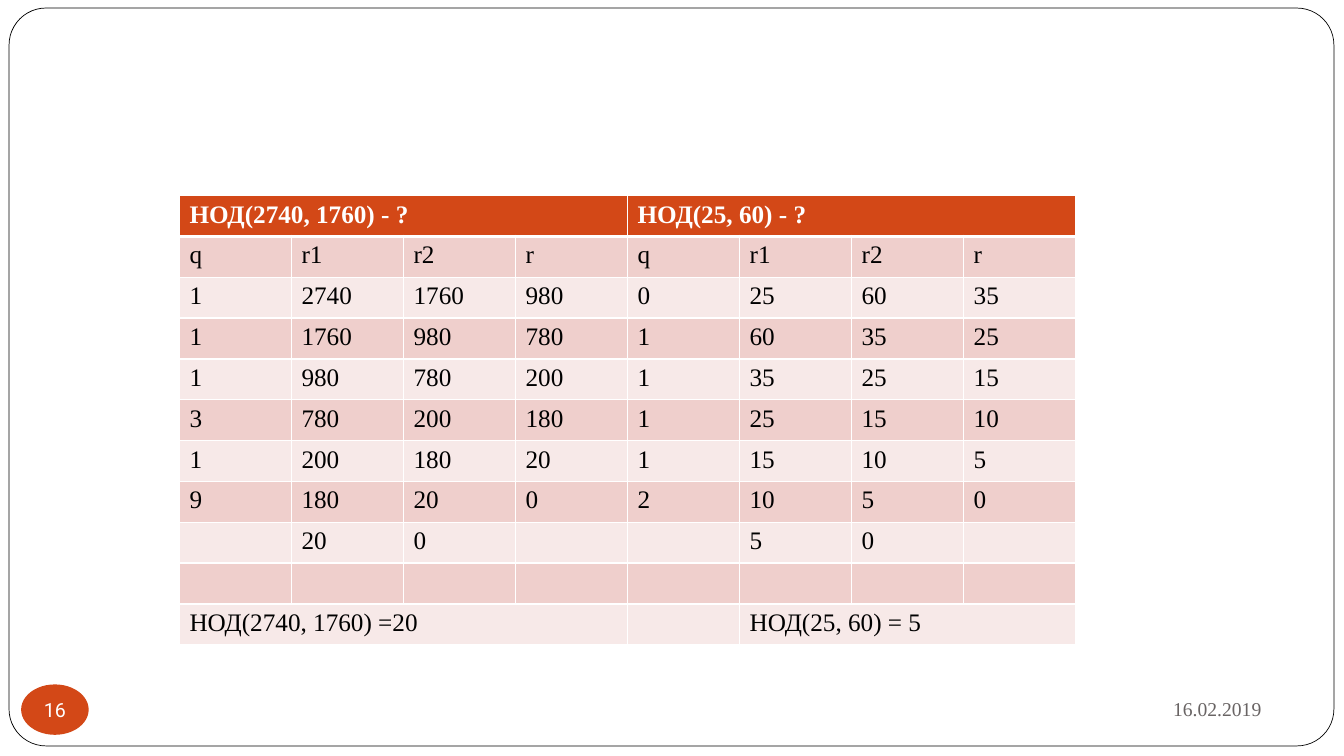
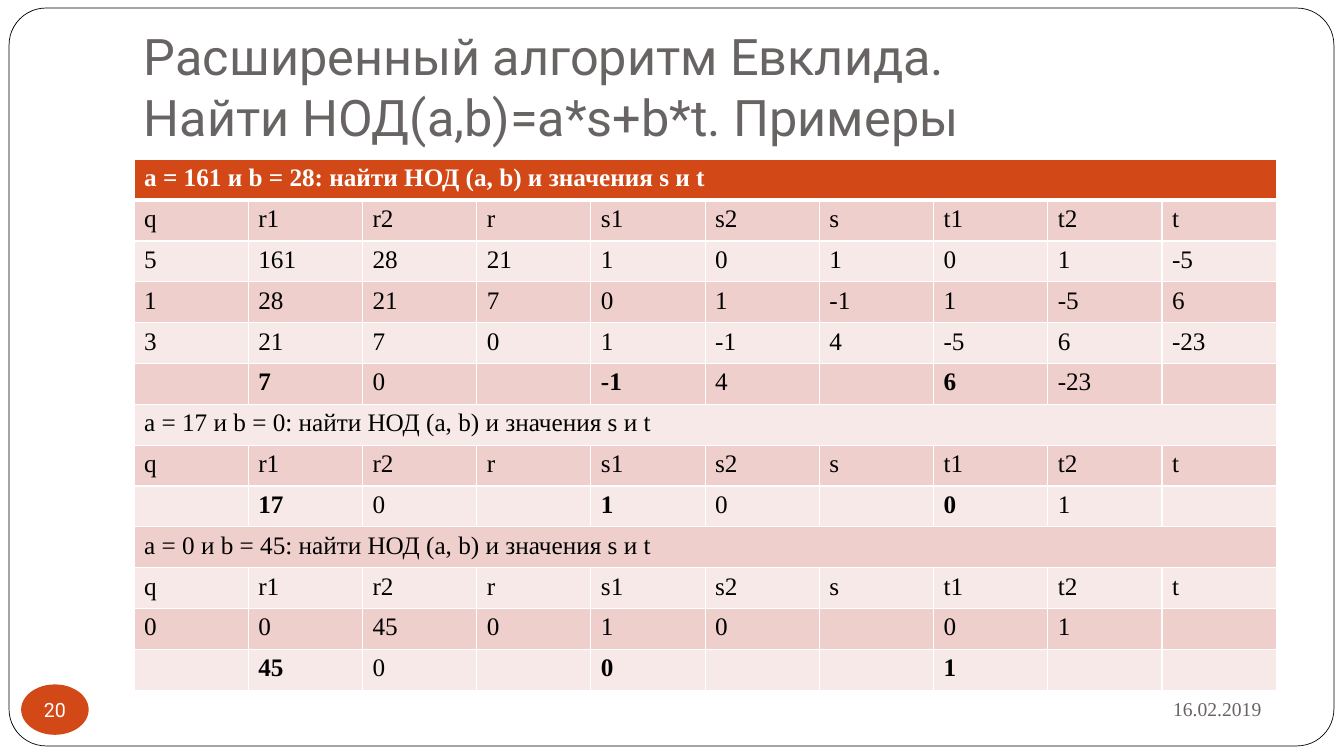
from pptx import Presentation
from pptx.dml.color import RGBColor
from pptx.enum.shapes import MSO_SHAPE as Shape
from pptx.enum.text import MSO_ANCHOR as Anchor, PP_ALIGN as Align
from pptx.oxml import parse_xml
from pptx.oxml.ns import nsdecls
from pptx.util import Inches, Pt

# Shared style
WHITE = RGBColor(0xFF, 0xFF, 0xFF)
BLACK = RGBColor(0x00, 0x00, 0x00)
GRAY = RGBColor(0x69, 0x64, 0x64)
ORANGE = RGBColor(0xD3, 0x48, 0x17)
BANDS = (RGBColor(0xF7, 0xE9, 0xE8), RGBColor(0xEF, 0xCF, 0xCC))
HEADING_FONT = "Roboto"
BODY_FONT = "Times New Roman"
DATE = "16.02.2019"

# Table rows: cells are separated by |, a leading * marks bold,
# and a cell ending in >n spans n columns
GCD_COLUMNS = "q|r1|r2|r"
GCD_ROWS = [
    "*НОД(2740, 1760) - ?>4|*НОД(25, 60) - ?>4",
    f"{GCD_COLUMNS}|{GCD_COLUMNS}",
    "1|2740|1760|980|0|25|60|35",
    "1|1760|980|780|1|60|35|25",
    "1|980|780|200|1|35|25|15",
    "3|780|200|180|1|25|15|10",
    "1|200|180|20|1|15|10|5",
    "9|180|20|0|2|10|5|0",
    "|20|0|||5|0|",
    "|||||||",
    "НОД(2740, 1760) =20>4||НОД(25, 60) = 5>3",
]
EXTENDED_COLUMNS = f"{GCD_COLUMNS}|s1|s2|s|t1|t2|t"
TASK = "найти НОД (a, b) и значения s и t>10"
EXTENDED_ROWS = [
    f"*a = 161 и b = 28: {TASK}",
    EXTENDED_COLUMNS,
    "5|161|28|21|1|0|1|0|1|-5",
    "1|28|21|7|0|1|-1|1|-5|6",
    "3|21|7|0|1|-1|4|-5|6|-23",
    "|*7|0||*-1|4||*6|-23|",
    f"a = 17 и b = 0: {TASK}",
    EXTENDED_COLUMNS,
    "|*17|0||*1|0||*0|1|",
    f"a = 0 и b = 45: {TASK}",
    EXTENDED_COLUMNS,
    "0|0|45|0|1|0||0|1|",
    "|*45|0||*0|||*1||",
]


def box(left, top, width, height):
    return Inches(left), Inches(top), Inches(width), Inches(height)


def add_run(paragraph, text, size, font, color, bold=False):
    run = paragraph.add_run()
    run.text = text
    run.font.size = Pt(size)
    run.font.name = font
    run.font.color.rgb = color
    run.font.bold = bold


def add_shape(slide, kind, place, fill):
    shape = slide.shapes.add_shape(kind, *box(*place))
    shape.shadow.inherit = False
    shape.fill.solid()
    shape.fill.fore_color.rgb = fill
    shape.line.fill.background()
    return shape


def add_text_box(slide, place, anchor):
    frame = slide.shapes.add_textbox(*box(*place)).text_frame
    frame.word_wrap = True
    frame.vertical_anchor = anchor
    return frame


def add_border(slide):
    border = add_shape(slide, Shape.ROUNDED_RECTANGLE, (0.09, 0.08, 13.14, 7.32), WHITE)
    border.adjustments[0] = 0.05
    border.line.color.rgb = BLACK
    border.line.width = Pt(0.5)


def add_title(slide, lines):
    frame = add_text_box(slide, (1.33, 0.3, 11.33, 1.25), Anchor.BOTTOM)
    frame.margin_bottom = Inches(0.1)
    paragraph = frame.paragraphs[0]
    for index, line in enumerate(lines):
        if index:
            paragraph.add_line_break()
        add_run(paragraph, line, 36, HEADING_FONT, GRAY)


def add_footer(slide, number):
    date = add_text_box(slide, (9, 6.77, 3.61, 0.52), Anchor.MIDDLE).paragraphs[0]
    date.alignment = Align.RIGHT
    add_run(date, DATE, 14, BODY_FONT, GRAY)

    badge = add_shape(slide, Shape.OVAL, (0.21, 6.79, 0.67, 0.5), ORANGE).text_frame
    badge.margin_left = badge.margin_right = badge.margin_top = badge.margin_bottom = 0
    badge.word_wrap = False
    badge.vertical_anchor = Anchor.MIDDLE
    badge.paragraphs[0].alignment = Align.CENTER
    add_run(badge.paragraphs[0], str(number), 14, HEADING_FONT, WHITE)


def style_cell(cell, row):
    """Borders come before the fill, as the schema requires."""
    widths = {"L": 1, "R": 1, "T": 3 if row == 1 else 1, "B": 3 if row == 0 else 1}
    properties = cell._tc.get_or_add_tcPr()
    for side, width in widths.items():
        properties.append(parse_xml(
            f'<a:ln{side} {nsdecls("a")} w="{Pt(width)}"><a:solidFill>'
            f'<a:srgbClr val="{WHITE}"/></a:solidFill></a:ln{side}>'))
    cell.fill.solid()
    cell.fill.fore_color.rgb = BANDS[row % 2] if row else ORANGE


def add_table(slide, place, column_count, rows):
    left, top, width, height = box(*place)
    table = slide.shapes.add_table(
        len(rows), column_count, left, top, width, height).table
    table.first_row = table.horz_banding = False
    for column in table.columns:
        column.width = width // column_count
    for r, row in enumerate(rows):
        table.rows[r].height = height // len(rows)
        for c in range(column_count):
            style_cell(table.cell(r, c), r)
        c = 0
        for entry in row.split("|"):
            text, _, span = entry.partition(">")
            span = int(span or 1)
            cell = table.cell(r, c)
            if span > 1:
                cell.merge(table.cell(r, c + span - 1))
            if text:
                add_run(cell.text_frame.paragraphs[0], text.lstrip("*"), 18, BODY_FONT,
                        BLACK if r else WHITE, text.startswith("*"))
            c += span


def add_slide(deck, number, title=()):
    slide = deck.slides.add_slide(deck.slide_layouts[6])
    add_border(slide)
    if title:
        add_title(slide, title)
    add_footer(slide, number)
    return slide


def main():
    deck = Presentation()
    deck.slide_width, deck.slide_height = Inches(13.33), Inches(7.5)

    # Euclidean algorithm
    gcd = add_slide(deck, 16)
    add_table(gcd, (1.78, 1.94, 8.89, 4.46), 8, GCD_ROWS)

    # Extended Euclidean algorithm
    extended = add_slide(deck, 20, ("Расширенный алгоритм Евклида. ",
                                    "Найти НОД(a,b)=a*s+b*t. Примеры"))
    add_table(extended, (1.33, 1.58, 11.33, 5.27), 10, EXTENDED_ROWS)

    deck.save("out.pptx")


if __name__ == "__main__":
    main()
